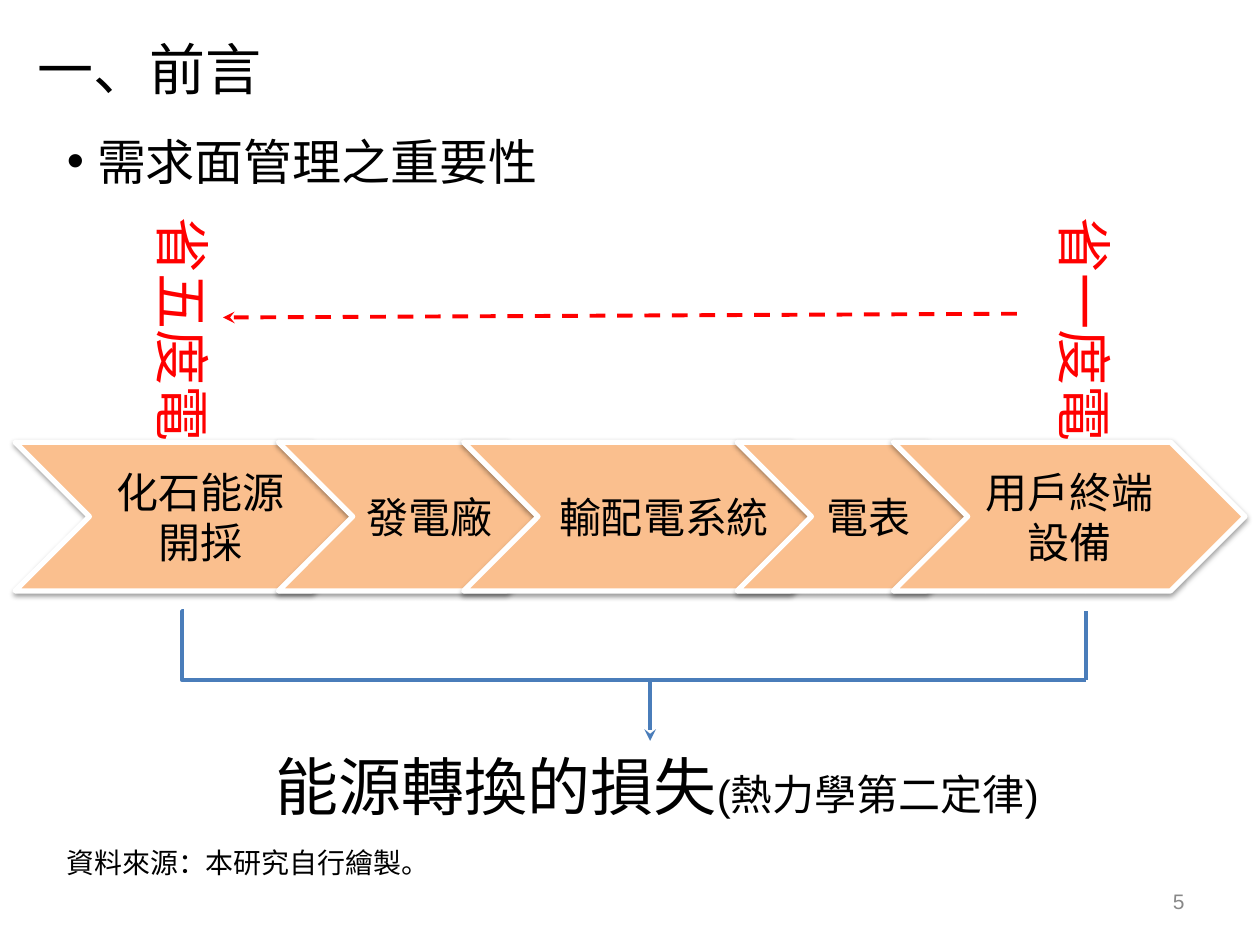
import pptx
import pptx.util
import pptx.dml.color
import pptx.enum.dml
import pptx.enum.shapes
import pptx.enum.text
import pptx.oxml
import pptx.oxml.ns
from lxml import etree

Inches = pptx.util.Inches
Pt = pptx.util.Pt
Align = pptx.enum.text.PP_ALIGN
Anchor = pptx.enum.text.MSO_ANCHOR
Connector = pptx.enum.shapes.MSO_CONNECTOR
qn = pptx.oxml.ns.qn

BLACK, RED, BLUE, GREY = "000000", "FF0000", "4A7DBA", "888888"
WHITE, ORANGE = "FFFFFF", "FABF8E"


def color(hex_value):
    return pptx.dml.color.RGBColor.from_string(hex_value)


class SlideBuilder:
    font = "Arial"

    def __init__(self, slide):
        self.slide = slide

    def fill_text(self, shape, runs, ink=BLACK, align=Align.LEFT, anchor=Anchor.TOP):
        """Fill a shape with one paragraph of (text, size) runs."""
        frame = shape.text_frame
        frame.word_wrap = True
        frame.auto_size = pptx.enum.text.MSO_AUTO_SIZE.NONE
        frame.vertical_anchor = anchor
        paragraph = frame.paragraphs[0]
        paragraph.alignment = align
        for text, size in runs:
            run = paragraph.add_run()
            run.text = text
            run.font.name = self.font
            run.font.size = Pt(size)
            run.font.color.rgb = color(ink)
        return paragraph

    def placeholder(self, index, box, text, size, anchor=Anchor.TOP):
        holder = self.slide.placeholders[index]
        holder.left, holder.top, holder.width, holder.height = map(Inches, box)
        return self.fill_text(holder, [(text, size)], anchor=anchor)

    def bullet(self, box, text, size, indent):
        paragraph = self.placeholder(1, box, text, size)
        paragraph.space_before = Pt(0)
        properties = paragraph._p.get_or_add_pPr()
        properties.set("marL", str(Inches(indent)))
        properties.set("indent", str(-Inches(indent)))
        etree.SubElement(properties, qn("a:buChar"), char="•")

    def text(self, box, runs, rotation=0, **style):
        label = self.slide.shapes.add_textbox(*map(Inches, box))
        label.rotation = rotation
        self.fill_text(label, runs, **style)

    def chevron(self, box, text):
        step = self.slide.shapes.add_shape(
            pptx.enum.shapes.MSO_SHAPE.CHEVRON, *map(Inches, box))
        step.fill.solid()
        step.fill.fore_color.rgb = color(ORANGE)
        step.line.color.rgb = color(WHITE)
        step.line.width = Pt(3)
        # Soft shadow straight below
        step.shadow.inherit = False
        effects = step._element.spPr.find(qn("a:effectLst"))
        shadow = etree.SubElement(
            effects, qn("a:outerShdw"), blurRad=str(Pt(3.1)), dist=str(Pt(1.6)),
            dir="5400000", rotWithShape="0")
        tint = etree.SubElement(shadow, qn("a:srgbClr"), val=BLACK)
        etree.SubElement(tint, qn("a:alpha"), val="38000")
        self.fill_text(step, [(text, 24)], align=Align.CENTER, anchor=Anchor.MIDDLE)

    def line(self, start, end, ink, kind=Connector.STRAIGHT, dashed=False,
             arrow=False, bend=None):
        link = self.slide.shapes.add_connector(kind, *map(Inches, start + end))
        link.line.color.rgb = color(ink)
        link.line.width = Pt(2.25)
        if dashed:
            link.line.dash_style = pptx.enum.dml.MSO_LINE.DASH
        properties = link._element.spPr
        if arrow:
            etree.SubElement(properties.find(qn("a:ln")), qn("a:tailEnd"), type="stealth")
        if bend is not None:
            guides = properties.find(qn("a:prstGeom")).get_or_add_avLst()
            etree.SubElement(guides, qn("a:gd"), name="adj1", fmla=f"val {bend}")
        etree.SubElement(properties, qn("a:effectLst"))


def main():
    deck = pptx.Presentation()
    deck.slide_width, deck.slide_height = Inches(10), Inches(7.5)
    builder = SlideBuilder(deck.slides.add_slide(deck.slide_layouts[1]))

    # Title and topic
    builder.placeholder(0, (0.2, 0.08, 9.65, 0.92), "一、前言", 32, Anchor.MIDDLE)
    builder.bullet((0.43, 0.99, 6.93, 0.57), "需求面管理之重要性", 28, indent=0.24)

    # Savings at the user's end and at the source
    for left, saving in ((7.54, "省一度電"), (0.38, "省五度電")):
        builder.text((left, 2.28, 2.05, 0.74), [(saving, 32)], rotation=90, ink=RED)
    builder.line((8.07, 2.49), (1.77, 2.52), RED, dashed=True, arrow=True)

    # Energy supply chain
    chain = (
        (0.12, 2.94, "化石能源開採"),
        (2.21, 2.4, "發電廠"),
        (3.68, 3.18, "輸配電系統"),
        (5.85, 2.09, "電表"),
        (7.09, 2.79, "用戶終端設備"),
    )
    for left, width, stage in chain:
        builder.chevron((left, 3.51, width, 1.18), stage)

    # Bracket leading to the conversion loss
    bracket_top, bracket_base, bracket_right = 4.85, 5.4, 8.62
    builder.line((1.46, bracket_top), (bracket_right, bracket_base), BLUE,
                 kind=Connector.ELBOW, bend=-200)
    builder.line((bracket_right, bracket_top), (bracket_right, bracket_base), BLUE)
    builder.line((5.16, bracket_base), (5.16, 5.88), BLUE, arrow=True)
    builder.text((2.09, 5.88, 6.69, 0.71),
                 [("能源轉換的損失", 36), ("(熱力學第二定律)", 24)])

    # Source note and page number
    builder.text((0.43, 6.66, 3.86, 0.37), [("資料來源：本研究自行繪製。", 16)])
    builder.text((7.17, 6.95, 2.33, 0.4), [("5", 12)], ink=GREY,
                 align=Align.RIGHT, anchor=Anchor.MIDDLE)

    deck.save("out.pptx")


if __name__ == "__main__":
    main()
